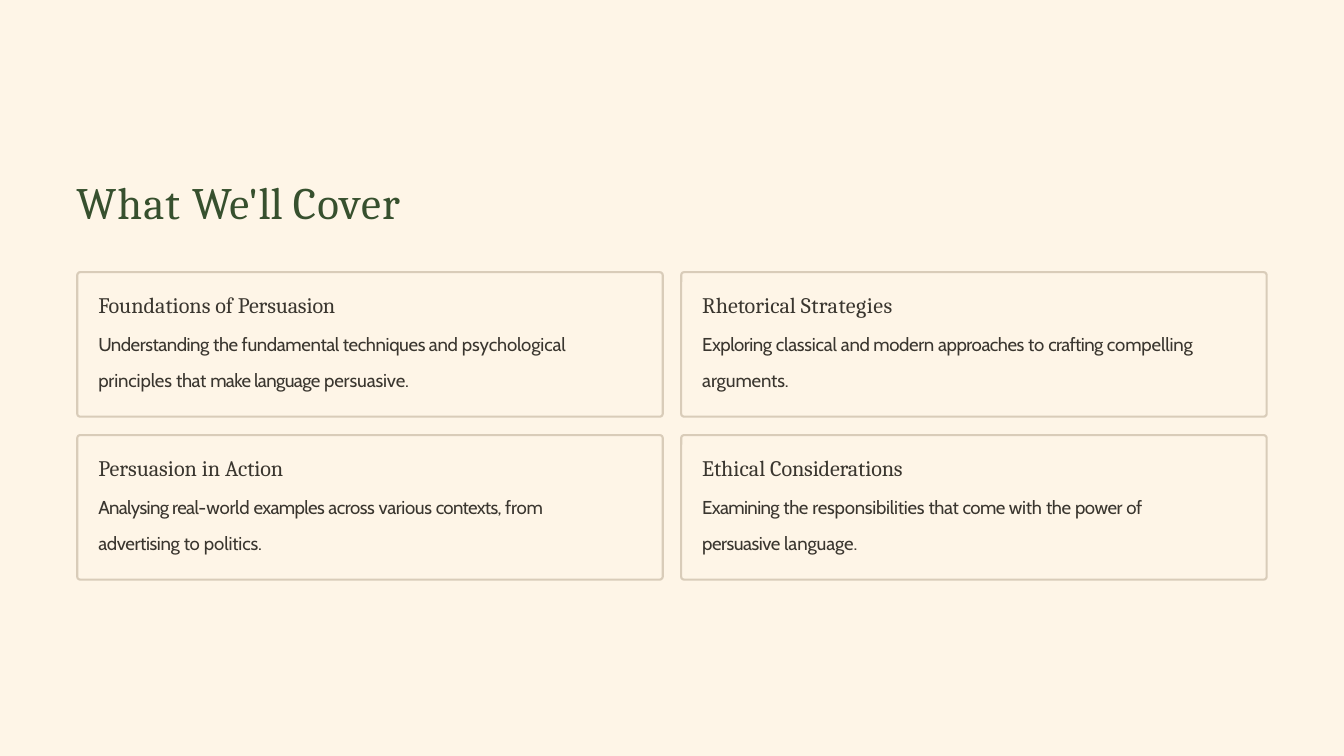
from pptx import Presentation
from pptx.dml.color import RGBColor
from pptx.enum.shapes import MSO_SHAPE
from pptx.enum.text import MSO_AUTO_SIZE
from pptx.util import Inches, Pt

# Each run is (text, letter spacing in points).
TITLE = [("What ", 0.9), ("We'll ", 0), ("Cover", 1.1)]

# Each card is (text width, heading runs, body runs), row by row.
CARDS = [
    (5.79,
     [("Foundations of ", 0), ("Persuasion", -0.1)],
     [("Understanding ", -0.4), ("the fundamental techniques and ", -0.3),
      ("psychological principles ", -0.1), ("that ", -0.3),
      ("make language ", -0.5), ("persuasive.", -0.1)]),
    (6.11,
     [("Rhetorical ", 0), ("Strategies", 0.4)],
     [("Exploring ", -0.4), ("classical ", -0.2), ("and modern ", -0.3),
      ("approaches ", -0.4), ("to ", -0.2), ("crafting ", -0.5),
      ("compelling arguments.", -0.1)]),
    (5.58,
     [("Persuasion in ", 0), ("Action", -0.1)],
     [("Analysing real-", -0.5), ("world ", -0.2), ("examples ", -0.5),
      ("across ", -0.4), ("various ", -0.3), ("contexts, ", -0.6),
      ("from ", -0.2), ("advertising ", -0.3), ("to ", -0.2),
      ("politics.", -0.1)]),
    (5.45,
     [("Ethical ", 0), ("Considerations", -0.1)],
     [("Examining ", -0.5), ("the ", -0.3), ("responsibilities ", -0.2),
      ("that ", -0.3), ("come ", -0.5), ("with ", -0.2), ("the ", -0.3),
      ("power ", -0.4), ("of ", -0.2), ("persuasive ", -0.4),
      ("language.", -0.1)]),
]

# Text styles are (font, size, colour).
THEME = {
    "page": "FEF5E7",
    "edge": "D9CCB9",
    "title": ("Cambria", 38.5, "37502E"),
    "head": ("Cambria", 19, "3A362F"),
    "body": ("Cabin", 16, "3A362F"),
}

COLS = 2
LEFT, TOP = 0.92, 3.24
WIDE, HIGH = 6.97, 1.72
STEP_X, STEP_Y = 7.19, 1.94
PAD_X, PAD_Y = 0.24, 0.22
TEXT_HIGH = 1.21
RADIUS = 0.035


def color(name):
    return RGBColor.from_string(name)


def add_text(slide, x, y, w, h):
    frame = slide.shapes.add_textbox(
        Inches(x), Inches(y), Inches(w), Inches(h)).text_frame
    frame.word_wrap = True
    frame.auto_size = MSO_AUTO_SIZE.SHAPE_TO_FIT_TEXT
    frame.margin_left = frame.margin_top = Inches(0.01)
    frame.margin_right = frame.margin_bottom = 0
    return frame


def fill_line(para, runs, style, before=1.0):
    font, size, ink = THEME[style]
    para.space_before = Pt(before)
    for text, gap in runs:
        run = para.add_run()
        run.text = text
        run.font.name = font
        run.font.size = Pt(size)
        run.font.color.rgb = color(ink)
        run._r.get_or_add_rPr().set("spc", str(round(gap * 100)))


def add_card(slide, x, y, width, head, body):
    box = slide.shapes.add_shape(
        MSO_SHAPE.ROUNDED_RECTANGLE,
        Inches(x), Inches(y), Inches(WIDE), Inches(HIGH))
    box.adjustments[0] = RADIUS / HIGH
    box.shadow.inherit = False
    box.fill.background()
    box.line.color.rgb = color(THEME["edge"])
    box.line.width = Pt(1.8)

    frame = add_text(slide, x + PAD_X, y + PAD_Y, width, TEXT_HIGH)
    fill_line(frame.paragraphs[0], head, "head")
    para = frame.add_paragraph()
    para.line_spacing = Pt(31.5)
    fill_line(para, body, "body", 0.1)


def main():
    deck = Presentation()
    deck.slide_width, deck.slide_height = Inches(16), Inches(9)
    slide = deck.slides.add_slide(deck.slide_layouts[6])
    back = slide.background.fill
    back.solid()
    back.fore_color.rgb = color(THEME["page"])

    title = add_text(slide, 0.9, 2.07, 4.32, 0.67)
    fill_line(title.paragraphs[0], TITLE, "title")
    for i, card in enumerate(CARDS):
        row, col = divmod(i, COLS)
        add_card(slide, LEFT + col * STEP_X, TOP + row * STEP_Y, *card)
    deck.save("out.pptx")


if __name__ == "__main__":
    main()
